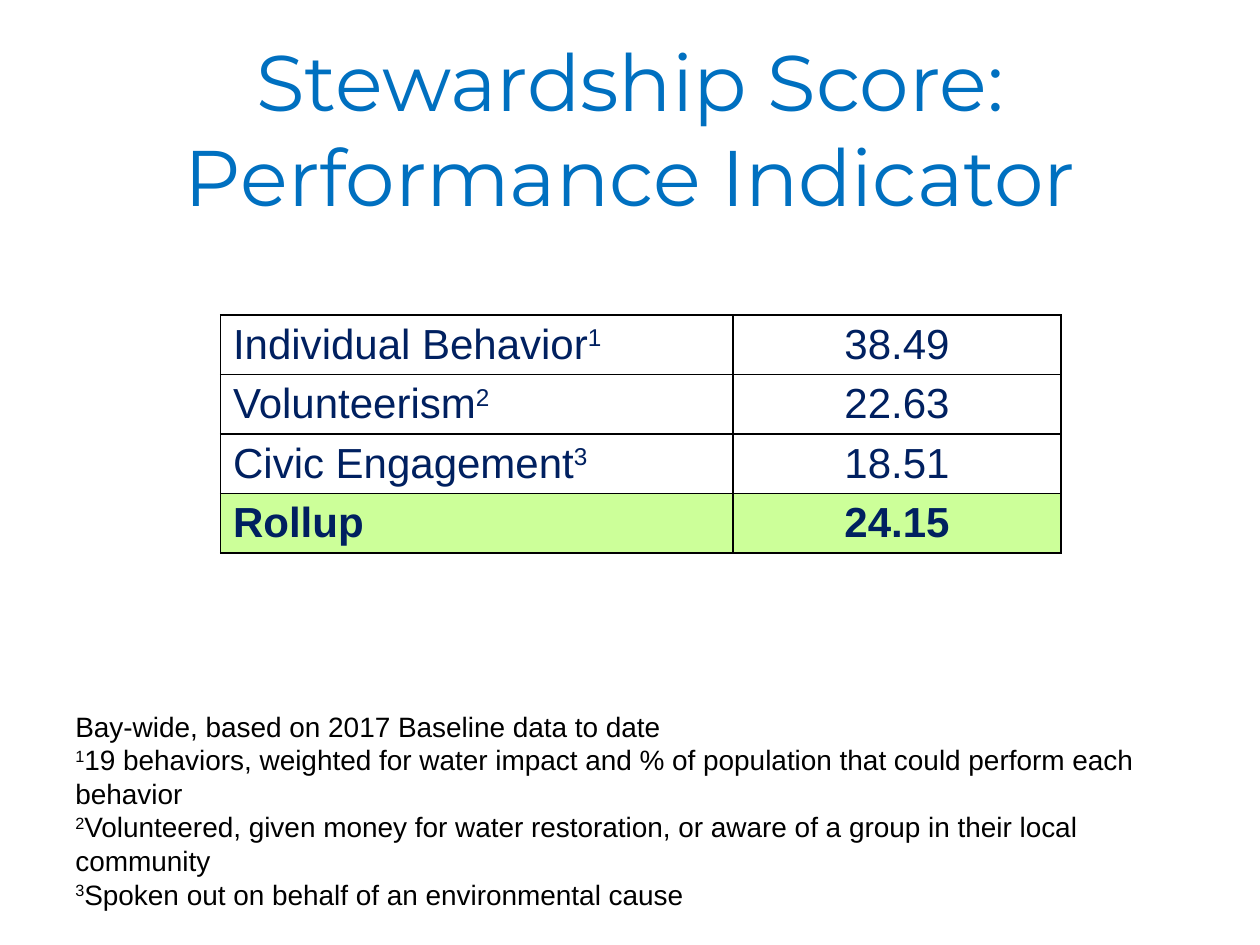
from lxml import etree
from pptx import Presentation
from pptx.dml.color import RGBColor
from pptx.enum.text import MSO_ANCHOR, MSO_AUTO_SIZE, PP_ALIGN
from pptx.oxml.ns import qn
from pptx.util import Inches, Pt

CENTER, LEFT = PP_ALIGN.CENTER, PP_ALIGN.LEFT
TOP = MSO_ANCHOR.TOP
NO_AUTOFIT = MSO_AUTO_SIZE.NONE

BLUE = RGBColor(0x00, 0x70, 0xC0)
NAVY = RGBColor(0x00, 0x20, 0x60)
BLACK = RGBColor(0x00, 0x00, 0x00)
GREEN = RGBColor(0xCC, 0xFF, 0x99)

TITLE_ONLY = 5
ROW_HEIGHT = 0.47
LABEL_SHARE = 0.61

# Label, footnote mark, score
SCORES = [
    ("Individual Behavior", "1", "38.49"),
    ("Volunteerism", "2", "22.63"),
    ("Civic Engagement", "3", "18.51"),
    ("Rollup", "", "24.15"),
]

# Footnote mark, text
NOTES = [
    ("", "Bay-wide, based on 2017 Baseline data to date"),
    ("1", "19 behaviors, weighted for water impact and % of population that could perform each behavior"),
    ("2", "Volunteered, given money for water restoration, or aware of a group in their local community"),
    ("3", "Spoken out on behalf of an environmental cause"),
]


def format_run(run, font_name, size, color, bold=False):
    run.font.name = font_name
    run.font.size = Pt(size)
    run.font.color.rgb = color
    run.font.bold = bold


def add_run(para, text, size, color, bold=False, raised=False):
    """Append an Arial run, raised for a footnote mark; empty text adds nothing."""
    if not text:
        return
    run = para.add_run()
    run.text = text
    format_run(run, "Arial", size, color, bold)
    if raised:
        run.font._element.set("baseline", "30000")


def set_borders(cell):
    """Draw a one-point black line on all four sides, placed before the fill."""
    properties = cell._tc.get_or_add_tcPr()
    for index, side in enumerate(("lnL", "lnR", "lnT", "lnB")):
        line = etree.Element(qn(f"a:{side}"), w=str(Pt(1)))
        fill = etree.SubElement(line, qn("a:solidFill"))
        etree.SubElement(fill, qn("a:srgbClr"), val=str(BLACK))
        properties.insert(index, line)


def place_title(page, left, top, width, height):
    title = page.shapes.title
    title.left, title.top, title.width, title.height = map(Inches, (left, top, width, height))
    frame = title.text_frame
    frame.text = "Stewardship Score:\nPerformance Indicator"
    frame.word_wrap = True
    frame.auto_size = NO_AUTOFIT
    frame.vertical_anchor = TOP
    for para in frame.paragraphs:
        para.alignment = CENTER
        for run in para.runs:
            format_run(run, "Montserrat", 45, BLUE)


def place_scores(page, left, top, width):
    height = ROW_HEIGHT * len(SCORES)
    table = page.shapes.add_table(len(SCORES), 2, *map(Inches, (left, top, width, height))).table
    table.first_row = table.horz_banding = False
    table.columns[0].width = Inches(width * LABEL_SHARE)
    table.columns[1].width = Inches(width * (1 - LABEL_SHARE))

    for row, (label, mark, score) in zip(table.rows, SCORES):
        is_total = label == "Rollup"
        for cell, text, cell_mark, alignment in zip(
            row.cells, (label, score), (mark, ""), (LEFT, CENTER)
        ):
            para = cell.text_frame.paragraphs[0]
            para.alignment = alignment
            add_run(para, text, 24, NAVY, bold=is_total)
            add_run(para, cell_mark, 24, NAVY, raised=True)
            if is_total:
                cell.fill.solid()
                cell.fill.fore_color.rgb = GREEN
            else:
                cell.fill.background()
            set_borders(cell)


def place_notes(page, left, top, width, height):
    box = page.shapes.add_textbox(*map(Inches, (left, top, width, height)))
    frame = box.text_frame
    frame.word_wrap = True
    for index, (mark, text) in enumerate(NOTES):
        para = frame.add_paragraph() if index else frame.paragraphs[0]
        add_run(para, mark, 16, BLACK, raised=True)
        add_run(para, text, 16, BLACK)


def main():
    deck = Presentation()
    deck.slide_width, deck.slide_height = Inches(10), Inches(7.5)
    page = deck.slides.add_slide(deck.slide_layouts[TITLE_ONLY])
    place_title(page, 0.75, 0.21, 8.5, 2.25)
    place_scores(page, 1.75, 2.5, 6.67)
    place_notes(page, 0.5, 5.58, 9.17, 1.7)
    deck.save("out.pptx")


if __name__ == "__main__":
    main()
